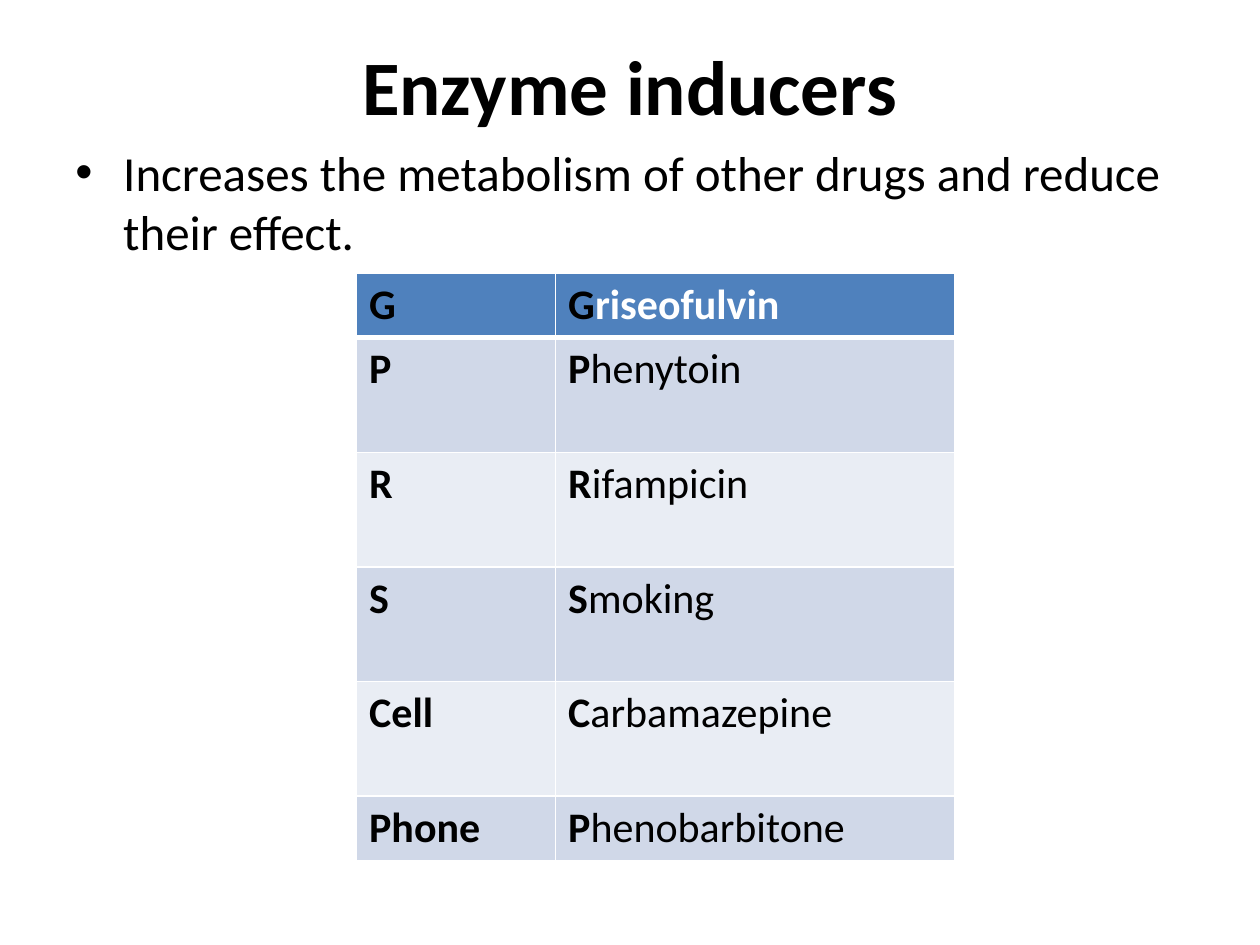
from lxml.etree import SubElement
from pptx import Presentation
from pptx.dml.color import RGBColor
from pptx.enum.text import MSO_ANCHOR, PP_ALIGN
from pptx.oxml.ns import qn
from pptx.util import Inches, Pt

TITLE = "Enzyme inducers"
SUMMARY = "Increases the metabolism of other drugs and reduce their effect."
INDUCERS = [
    ("G", "Griseofulvin"),
    ("P", "Phenytoin"),
    ("R", "Rifampicin"),
    ("S", "Smoking"),
    ("Cell", "Carbamazepine"),
    ("Phone", "Phenobarbitone"),
]
BLACK, WHITE, HEADER = "000000", "FFFFFF", "4F81BD"
BANDS = ["E9EDF4", "D0D8E8"]
WIDE, HIGH = 10, 7.5
MARGIN = WIDE * 0.05
COLUMNS = [1.58, 3.17]
SHORT_ROW, TALL_ROW = 0.51, 0.91
INDENT = 0.38


def color(value):
    return RGBColor.from_string(value)


def add_span(para, text, size, bold=False, fill=BLACK):
    span = para.add_run()
    span.text = text
    formats = {"name": "Calibri", "size": Pt(size), "bold": bold}
    for name, value in formats.items():
        setattr(span.font, name, value)
    span.font.color.rgb = color(fill)


def place(shape, left, top, width, height):
    bounds = {"left": left, "top": top, "width": width, "height": height}
    for name, value in bounds.items():
        setattr(shape, name, Inches(value))


def add_borders(cell, bottom_width):
    properties = cell._tc.get_or_add_tcPr()
    for side, width in (("L", 1), ("R", 1), ("T", 1), ("B", bottom_width)):
        line = SubElement(properties, qn(f"a:ln{side}"), w=str(Pt(width)))
        SubElement(SubElement(line, qn("a:solidFill")), qn("a:srgbClr"), val=WHITE)


def add_title(page):
    title = page.shapes.title
    place(title, MARGIN, 0.17, WIDE - 2 * MARGIN, 1)
    title.text_frame.vertical_anchor = MSO_ANCHOR.MIDDLE
    para = title.text_frame.paragraphs[0]
    para.alignment = PP_ALIGN.CENTER
    add_span(para, TITLE, 44, True)


def add_summary(page):
    box = page.shapes.add_textbox(0, 0, 0, 0)
    place(box, MARGIN, 1.08, WIDE - 2 * MARGIN, 1.09)
    box.text_frame.word_wrap = True
    para = box.text_frame.paragraphs[0]
    properties = para._p.get_or_add_pPr()
    properties.set("marL", str(Inches(INDENT)))
    properties.set("indent", str(-Inches(INDENT)))
    SubElement(properties, qn("a:buFont"), typeface="Arial")
    SubElement(properties, qn("a:buChar"), char="•")
    add_span(para, SUMMARY, 28)


def add_inducers(page):
    last = len(INDUCERS) - 1
    heights = [SHORT_ROW if row in (0, last) else TALL_ROW for row in range(last + 1)]
    frame = page.shapes.add_table(
        len(INDUCERS), len(COLUMNS), Inches(2.83), Inches(2.17),
        Inches(sum(COLUMNS)), Inches(sum(heights)),
    )
    table = frame.table
    for column, width in zip(table.columns, COLUMNS):
        column.width = Inches(width)
    for index, (letters, drug) in enumerate(INDUCERS):
        header = index == 0
        table.rows[index].height = Inches(heights[index])
        for cell in table.rows[index].cells:
            add_borders(cell, 3 if header else 1)
            cell.fill.solid()
            cell.fill.fore_color.rgb = color(HEADER if header else BANDS[index % 2])
        key, name = (cell.text_frame.paragraphs[0] for cell in table.rows[index].cells)
        add_span(key, letters, 24, True)
        add_span(name, drug[0], 24, True)
        add_span(name, drug[1:], 24, header, WHITE if header else BLACK)


def main():
    deck = Presentation()
    deck.slide_width, deck.slide_height = Inches(WIDE), Inches(HIGH)
    page = deck.slides.add_slide(deck.slide_layouts[5])
    add_title(page)
    add_summary(page)
    add_inducers(page)
    deck.save("out.pptx")


if __name__ == "__main__":
    main()
